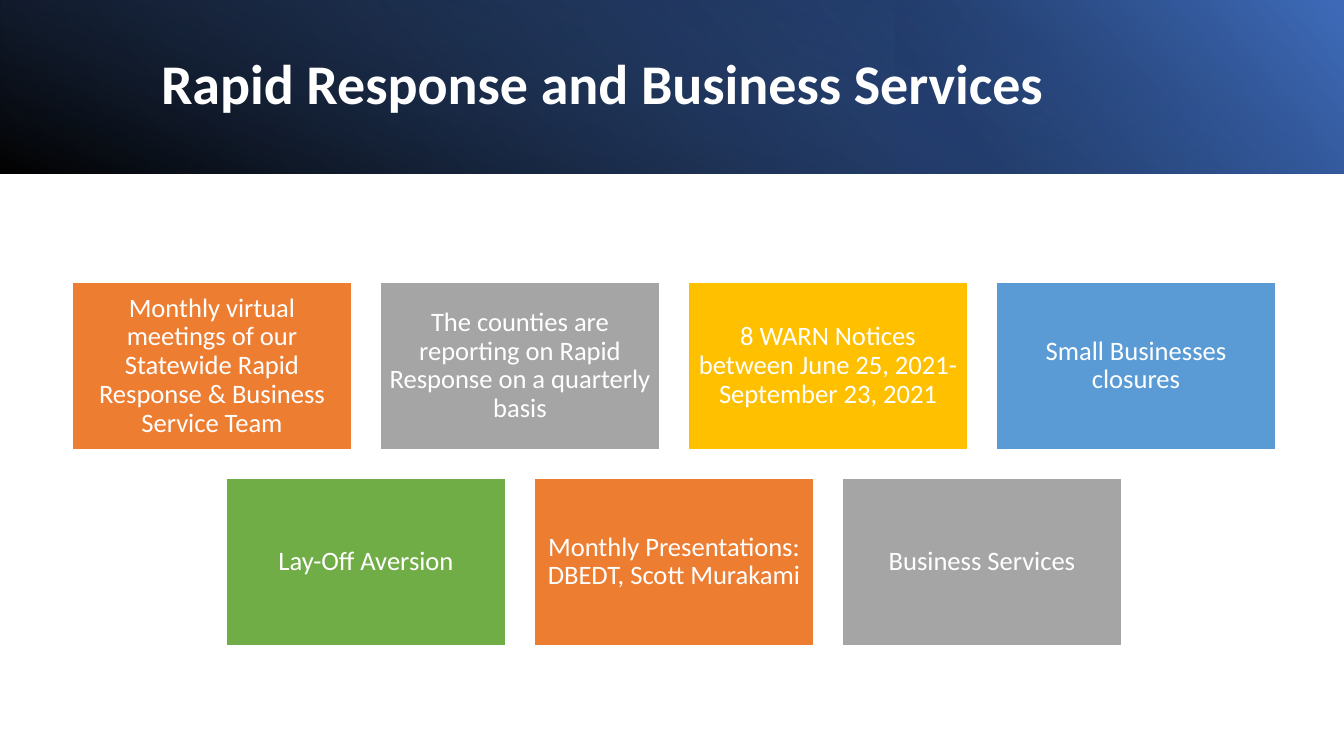
from lxml import etree
from pptx import Presentation
from pptx import util as u
from pptx.dml.color import RGBColor
from pptx.enum import shapes, text
from pptx.oxml.ns import qn

PX = 914400 / 100.8
THEME = {
    "font": "Calibri", "title_size": 40, "card_size": 19,
    "white": "FFFFFF", "black": "000000",
    "deep": "2F5597", "navy": "203864", "blue": "4472C4",
    "orange": "ED7D31", "gray": "A5A5A5", "gold": "FFC000",
    "sky": "5B9BD5", "green": "70AD47",
}


def add_block(left, top, width, height):
    block = slide.shapes.add_shape(
        shapes.MSO_SHAPE.RECTANGLE, *[round(n * PX) for n in (left, top, width, height)])
    block.shadow.inherit = False
    return block


def write(frame, words, size, bold, inset):
    frame.word_wrap = True
    frame.vertical_anchor = text.MSO_ANCHOR.MIDDLE
    frame.margin_left = frame.margin_right = round(inset * PX)
    frame.margin_top = frame.margin_bottom = round(inset * PX)
    paragraph = frame.paragraphs[0]
    paragraph.line_spacing = 0.9
    run = paragraph.add_run()
    run.text = words
    run.font.name = THEME["font"]
    run.font.size = u.Pt(size)
    run.font.bold = bold
    run.font.color.rgb = RGBColor.from_string(THEME["white"])
    return paragraph


deck = Presentation()
deck.slide_width = round(1344 * PX)
deck.slide_height = round(756 * PX)
slide = deck.slides.add_slide(deck.slide_layouts[6])

BAND = 174
banner_layers = [
    ((0, 0, 1344, BAND), 0, True, 140, [(0, "black", 96), (100, "deep", 100)]),
    ((896, 0, 448, BAND), 180, True, 320, [(19, "navy", 68), (100, "blue", 79)]),
    ((585, -585, BAND, 1344), 90, False, 340, [(23, "blue", 0), (99, "black", 74)]),
]
for box, rotation, flipped, angle, stops in banner_layers:
    layer = add_block(*box)
    layer.rotation = rotation
    if flipped:
        layer._element.spPr.find(qn("a:xfrm")).set("flipH", "1")
    layer.line.fill.background()
    layer.fill.gradient()
    layer.fill.gradient_angle = angle
    for stop, (position, color, opacity) in zip(layer.fill.gradient_stops, stops):
        stop.position = position / 100
        stop.color.rgb = RGBColor.from_string(THEME[color])
    tints = layer._element.spPr.iter(qn("a:srgbClr"))
    for tint, (position, color, opacity) in zip(tints, stops):
        etree.SubElement(tint, qn("a:alpha")).set("val", str(opacity * 1000))

title = slide.shapes.add_textbox(*[round(n * PX) for n in (151, 38, 1107, 97)])
write(title.text_frame, "Rapid Response and Business Services", THEME["title_size"], True, 10)

CARD_WIDTH, CARD_HEIGHT, GAP = 280, 168, 28
CENTER, FIRST_TOP = 674, 282
card_rows = [
    [("Monthly virtual meetings of our Statewide Rapid Response & Business Service Team", "orange"),
     ("The counties are reporting on Rapid Response on a quarterly basis", "gray"),
     ("8 WARN Notices between June 25, 2021-September 23, 2021", "gold"),
     ("Small Businesses closures", "sky")],
    [("Lay-Off Aversion", "green"),
     ("Monthly Presentations: DBEDT, Scott Murakami", "orange"),
     ("Business Services", "gray")],
]
for row, cards in enumerate(card_rows):
    row_width = len(cards) * (CARD_WIDTH + GAP) - GAP
    row_left = CENTER - row_width // 2
    for column, (words, color) in enumerate(cards):
        card = add_block(row_left + column * (CARD_WIDTH + GAP),
                         FIRST_TOP + row * (CARD_HEIGHT + GAP), CARD_WIDTH, CARD_HEIGHT)
        card.fill.solid()
        card.fill.fore_color.rgb = RGBColor.from_string(THEME[color])
        card.line.color.rgb = RGBColor.from_string(THEME["white"])
        card.line.width = u.Pt(1)
        paragraph = write(card.text_frame, words, THEME["card_size"], False, 8)
        paragraph.alignment = text.PP_ALIGN.CENTER

deck.save("out.pptx")
